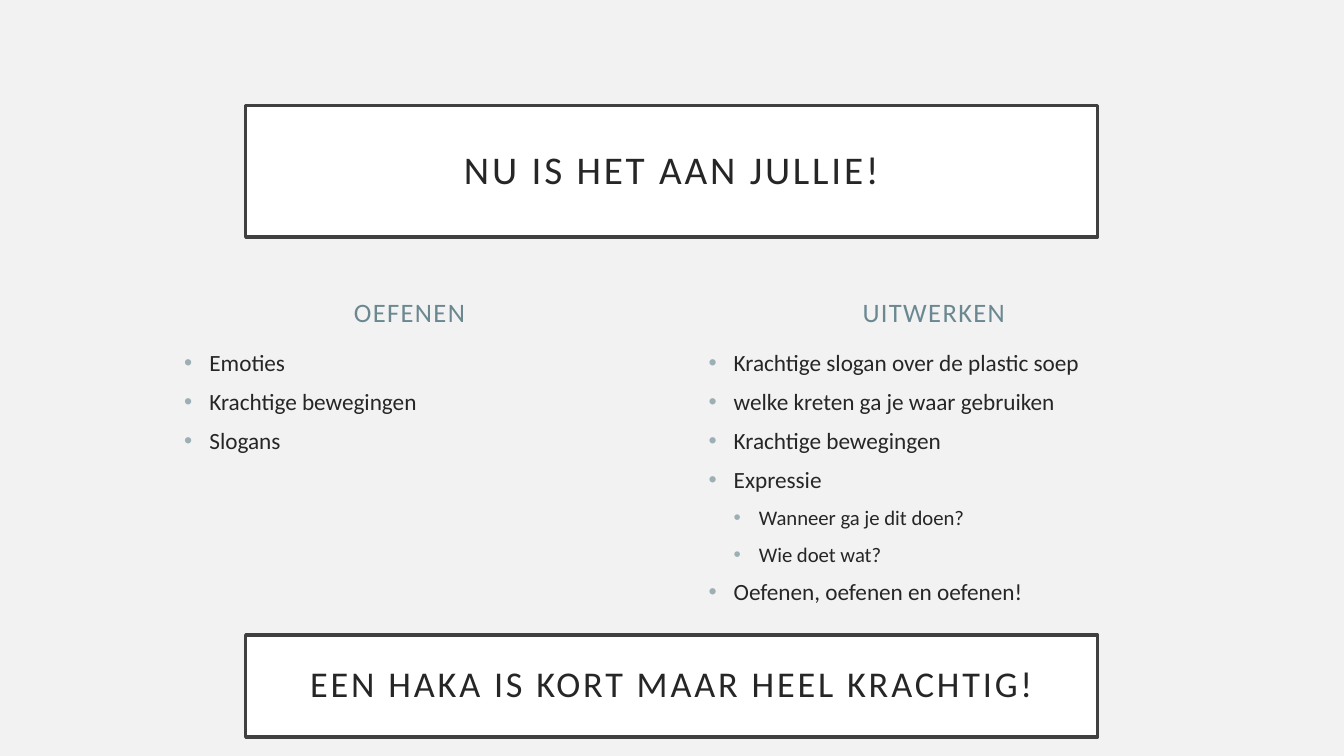
from pptx import Presentation
from pptx.dml.color import RGBColor
from pptx.enum.shapes import MSO_SHAPE
from pptx.enum.text import MSO_ANCHOR, PP_ALIGN
from pptx.oxml.ns import qn
from pptx.util import Pt
from lxml.etree import SubElement

theme = {
    "font": "Calibri",
    "back": "F2F2F2", "panel": "FFFFFF", "edge": "404040",
    "ink": "262626", "head": "6B8891", "dot": "9BAFB5",
    "title": 28, "close": 25.9, "label": 19, "item": (16.6, 14.8),
}


def color(name):
    return RGBColor.from_string(theme[name])


def style(para, text, size, ink, track=0):
    para.text = text
    font = para.font
    font.name, font.size = theme["font"], Pt(size)
    font.color.rgb = color(ink)
    if track:
        font._element.set("spc", str(track * 100)) if hasattr(font, "_element") else font._rPr.set("spc", str(track * 100))


deck = Presentation()
deck.slide_width, deck.slide_height = Pt(960), Pt(540)
slide = deck.slides.add_slide(deck.slide_layouts[6])
slide.background.fill.solid()
slide.background.fill.fore_color.rgb = color("back")

columns = [
    (124.5, "OEFENEN", [
        ("Emoties", 0), ("Krachtige bewegingen", 0), ("Slogans", 0)]),
    (499, "UITWERKEN", [
        ("Krachtige slogan over de plastic soep", 0),
        ("welke kreten ga je waar gebruiken", 0),
        ("Krachtige bewegingen", 0),
        ("Expressie", 0),
        ("Wanneer ga je dit doen?", 1),
        ("Wie doet wat?", 1),
        ("Oefenen, oefenen en oefenen!", 0)]),
]
for left, label, items in columns:
    frame = slide.shapes.add_textbox(Pt(left), Pt(182), Pt(336), Pt(55.5)).text_frame
    frame.word_wrap = True
    frame.vertical_anchor = MSO_ANCHOR.BOTTOM
    para = frame.paragraphs[0]
    para.alignment = PP_ALIGN.CENTER
    style(para, label, theme["label"], "head", 1)

    frame = slide.shapes.add_textbox(Pt(left), Pt(247.5), Pt(336), Pt(204.5)).text_frame
    frame.word_wrap = True
    for index, (text, level) in enumerate(items):
        para = frame.add_paragraph() if index else frame.paragraphs[0]
        para.level = level
        para.line_spacing = 0.9
        if index:
            para.space_before = Pt(10)
        props = para._p.get_or_add_pPr()
        props.set("marL", str(Pt(18 * (level + 1))))
        props.set("indent", str(Pt(-18)))
        tint = SubElement(props, qn("a:buClr"))
        SubElement(tint, qn("a:srgbClr")).set("val", theme["dot"])
        SubElement(props, qn("a:buFont")).set("typeface", "Arial")
        SubElement(props, qn("a:buChar")).set("char", "•")
        style(para, text, theme["item"][level], "ink")

panels = [
    (75.5, 94, "NU IS HET AAN JULLIE!", "title"),
    (453.5, 73, "EEN HAKA IS KORT MAAR HEEL KRACHTIG!", "close"),
]
for top, height, text, size in panels:
    panel = slide.shapes.add_shape(
        MSO_SHAPE.RECTANGLE, Pt(175.5), Pt(top), Pt(608.5), Pt(height))
    panel.shadow.inherit = False
    panel.fill.solid()
    panel.fill.fore_color.rgb = color("panel")
    panel.line.color.rgb = color("edge")
    panel.line.width = Pt(2.5)
    frame = panel.text_frame
    frame.word_wrap = True
    frame.vertical_anchor = MSO_ANCHOR.MIDDLE
    frame.margin_left = frame.margin_right = Pt(14.4)
    frame.margin_top = frame.margin_bottom = Pt(14.4)
    para = frame.paragraphs[0]
    para.alignment = PP_ALIGN.CENTER
    para.line_spacing = 0.9
    style(para, text, theme[size], "ink", 2)

deck.save("out.pptx")
